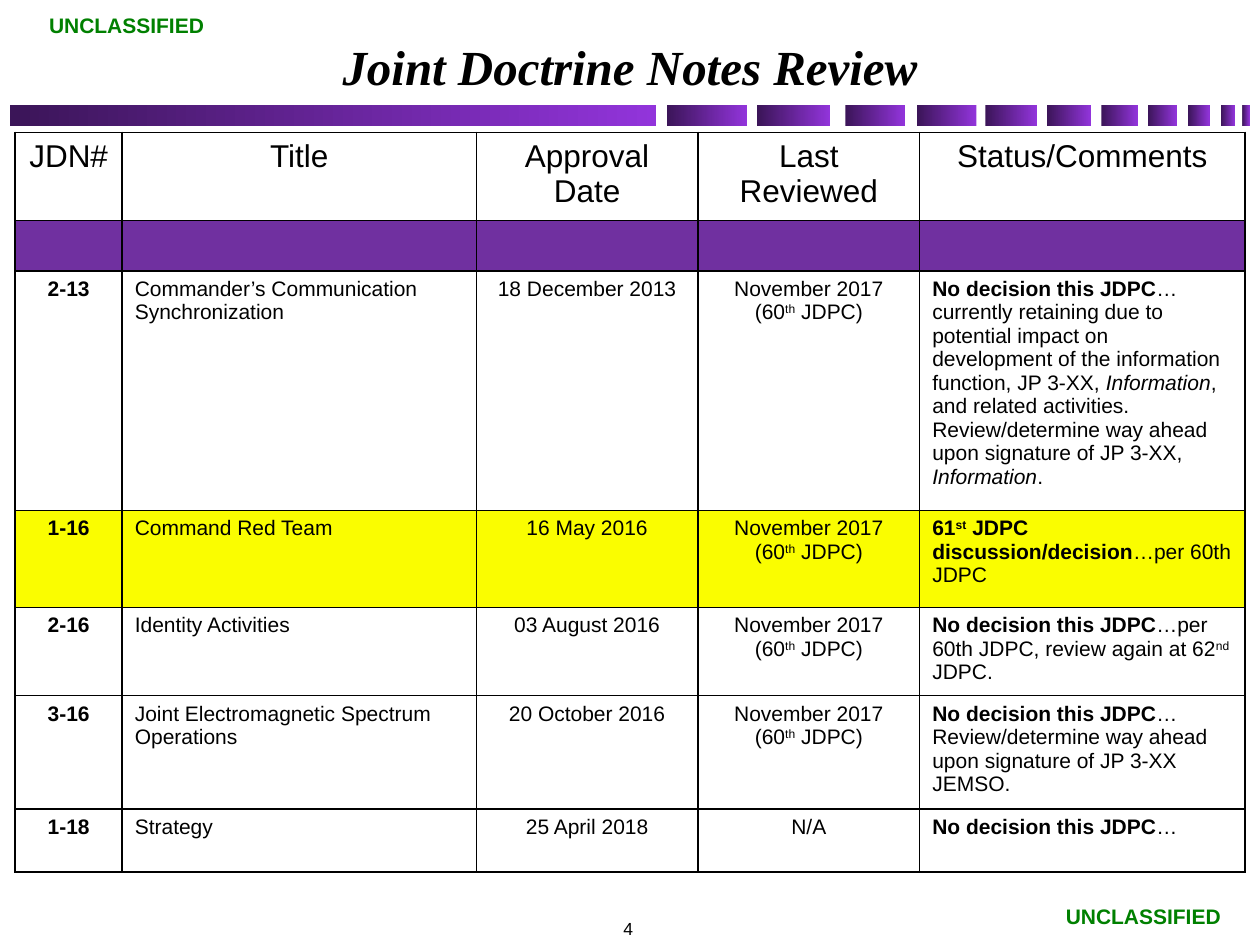
import pptx
import pptx.dml.color
import pptx.enum.shapes
import pptx.enum.text
import pptx.oxml
import pptx.oxml.ns
import pptx.util
from dataclasses import dataclass

ALIGN = pptx.enum.text.PP_ALIGN
ANCHOR = pptx.enum.text.MSO_ANCHOR
GRID_COLUMNS, GRID_ROWS = 100, 75
SLIDE_WIDTH, SLIDE_HEIGHT = pptx.util.Inches(10), pptx.util.Inches(7.5)


@dataclass(frozen=True)
class Theme:
    sans: str = "Arial"
    serif: str = "Times New Roman"
    ink: str = "000000"
    paper: str = "FFFFFF"
    marking: str = "008000"
    band: str = "7030A0"
    highlight: str = "FAFD00"
    bar_start: str = "3B1558"
    bar_end: str = "9234DB"
    title_size: int = 28
    header_size: int = 18
    body_size: int = 12
    number_size: int = 10


THEME = Theme()
BOLD, ITALIC, RAISED = {"bold": True}, {"italic": True}, {"raised": True}
BOLD_RAISED = BOLD | RAISED

BARS = [(0.8, 51.3), (52.9, 6.4), (60.1, 5.8), (67.1, 4.7), (72.8, 4.7), (78.2, 4.1),
        (83.1, 3.5), (87.4, 2.9), (91.1, 2.3), (94.3, 1.7), (96.9, 1.1), (98.6, 0.6)]
COLUMN_WIDTHS = [8.5, 28.1, 17.6, 17.6, 25.8]
ROW_HEIGHTS = [7, 4, 7, 7.7, 5.5, 5, 5]
COLUMN_ALIGNS = [ALIGN.CENTER, ALIGN.LEFT, ALIGN.CENTER, ALIGN.CENTER, ALIGN.LEFT]
HEADINGS = ["JDN#", "Title", "Approval Date", "Last Reviewed", "Status/Comments"]
REVIEWED = [[("November 2017", {})], [("(60", {}), ("th", RAISED), (" JDPC)", {})]]
NO_DECISION = ("No decision this JDPC", BOLD)
HIGHLIGHTED = "1-16"
NOTES = [
    ("2-13", "Commander’s Communication Synchronization", "18 December 2013", REVIEWED,
     [NO_DECISION,
      ("…currently retaining due to potential impact on development of the "
       "information function, JP 3-XX, ", {}),
      ("Information", ITALIC),
      (", and related activities. Review/determine way ahead upon signature of JP 3-XX, ", {}),
      ("Information", ITALIC), (".", {})]),
    ("1-16", "Command Red Team", "16 May 2016", REVIEWED,
     [("61", BOLD), ("st", BOLD_RAISED), (" JDPC discussion/decision", BOLD),
      ("…per 60th JDPC", {})]),
    ("2-16", "Identity Activities", "03 August 2016", REVIEWED,
     [NO_DECISION, ("…per 60th JDPC, review again at 62", {}), ("nd", RAISED), (" JDPC.", {})]),
    ("3-16", "Joint Electromagnetic Spectrum Operations", "20 October 2016", REVIEWED,
     [NO_DECISION, ("… Review/determine way ahead upon signature of JP 3-XX JEMSO.", {})]),
    ("1-18", "Strategy", "25 April 2018", [[("N/A", {})]], [NO_DECISION, ("…", {})]),
]


def across(columns):
    return round(SLIDE_WIDTH * columns / GRID_COLUMNS)


def down(rows):
    return round(SLIDE_HEIGHT * rows / GRID_ROWS)


def area(left, top, width, height):
    return across(left), down(top), across(width), down(height)


def rgb(value):
    return pptx.dml.color.RGBColor.from_string(value)


def write(frame, paragraphs, size, align, font=THEME.sans, color=THEME.ink):
    for index, runs in enumerate(paragraphs):
        paragraph = frame.add_paragraph() if index else frame.paragraphs[0]
        paragraph.alignment = align
        for text, style in runs:
            run = paragraph.add_run()
            run.text = text
            run.font.name = font
            run.font.size = pptx.util.Pt(size)
            run.font.color.rgb = rgb(color)
            run.font.bold = style.get("bold", False)
            run.font.italic = style.get("italic", False)
            if style.get("raised"):
                run._r.get_or_add_rPr().set("baseline", "30000")


def set_margins(frame, horizontal, vertical):
    frame.margin_left = frame.margin_right = across(horizontal)
    frame.margin_top = frame.margin_bottom = down(vertical)


def add_block(slide, place):
    block = slide.shapes.add_shape(pptx.enum.shapes.MSO_SHAPE.RECTANGLE, *place)
    block.shadow.inherit = False
    block.line.fill.background()
    return block


def add_bar(slide, left, width):
    bar = add_block(slide, area(left, 8.3, width, 1.7))
    bar.fill.gradient()
    bar.fill.gradient_angle = 0
    for stop, position, color in zip(bar.fill.gradient_stops, (0, 1),
                                     (THEME.bar_start, THEME.bar_end)):
        stop.position = position
        stop.color.rgb = rgb(color)


def add_marking(slide, left, top):
    marking = add_block(slide, area(left, top, 18.3, 2))
    marking.fill.solid()
    marking.fill.fore_color.rgb = rgb(THEME.paper)
    set_margins(marking.text_frame, 0, 0)
    write(marking.text_frame, [[("UNCLASSIFIED", BOLD)]], THEME.body_size,
          ALIGN.CENTER, color=THEME.marking)


def format_title(slide):
    title = slide.shapes.title
    title.left, title.top, title.width, title.height = area(7.1, 1.1, 85.8, 7)
    frame = title.text_frame
    frame.auto_size = pptx.enum.text.MSO_AUTO_SIZE.NONE
    frame.vertical_anchor = ANCHOR.BOTTOM
    set_margins(frame, 0.5, 0.5)
    write(frame, [[("Joint Doctrine Notes Review", BOLD | ITALIC)]], THEME.title_size,
          ALIGN.CENTER, THEME.serif)


def add_page_number(slide):
    frame = slide.shapes.add_textbox(*area(38.2, 71, 23.3, 4)).text_frame
    frame.word_wrap = True
    frame.vertical_anchor = ANCHOR.BOTTOM
    write(frame, [[("4", {})]], THEME.number_size, ALIGN.CENTER)


def add_borders(cell):
    properties = cell._tc.get_or_add_tcPr()
    for index, side in enumerate(("lnL", "lnR", "lnT", "lnB")):
        border = pptx.oxml.parse_xml(
            f'<a:{side} {pptx.oxml.ns.nsdecls("a")} w="12700"><a:solidFill>'
            f'<a:srgbClr val="{THEME.ink}"/></a:solidFill></a:{side}>')
        properties.insert(index, border)


def format_cell(cell, fill=None):
    if fill:
        cell.fill.solid()
        cell.fill.fore_color.rgb = rgb(fill)
    else:
        cell.fill.background()
    add_borders(cell)


def add_review_table(slide):
    place = area(1.2, 10.5, sum(COLUMN_WIDTHS), sum(ROW_HEIGHTS))
    table = slide.shapes.add_table(len(ROW_HEIGHTS), len(COLUMN_WIDTHS), *place).table
    table.first_row = table.horz_banding = False
    for column, width in zip(table.columns, COLUMN_WIDTHS):
        column.width = across(width)
    for row, height in zip(table.rows, ROW_HEIGHTS):
        row.height = down(height)
    for index, heading in enumerate(HEADINGS):
        header = table.cell(0, index)
        format_cell(header)
        write(header.text_frame, [[(heading, {})]], THEME.header_size, ALIGN.CENTER)
        format_cell(table.cell(1, index), THEME.band)
    for row, (number, name, approved, reviewed, status) in enumerate(NOTES, start=2):
        fill = THEME.highlight if number == HIGHLIGHTED else None
        contents = [[[(number, BOLD)]], [[(name, {})]], [[(approved, {})]], reviewed, [status]]
        for index, (paragraphs, align) in enumerate(zip(contents, COLUMN_ALIGNS)):
            cell = table.cell(row, index)
            format_cell(cell, fill)
            write(cell.text_frame, paragraphs, THEME.body_size, align)


def main():
    deck = pptx.Presentation()
    deck.slide_width, deck.slide_height = SLIDE_WIDTH, SLIDE_HEIGHT
    slide = deck.slides.add_slide(deck.slide_layouts[5])
    for left, width in BARS:
        add_bar(slide, left, width)
    add_marking(slide, 0.9, 1)
    add_marking(slide, 81.6, 71.7)
    format_title(slide)
    add_page_number(slide)
    add_review_table(slide)
    deck.save("out.pptx")


if __name__ == "__main__":
    main()
